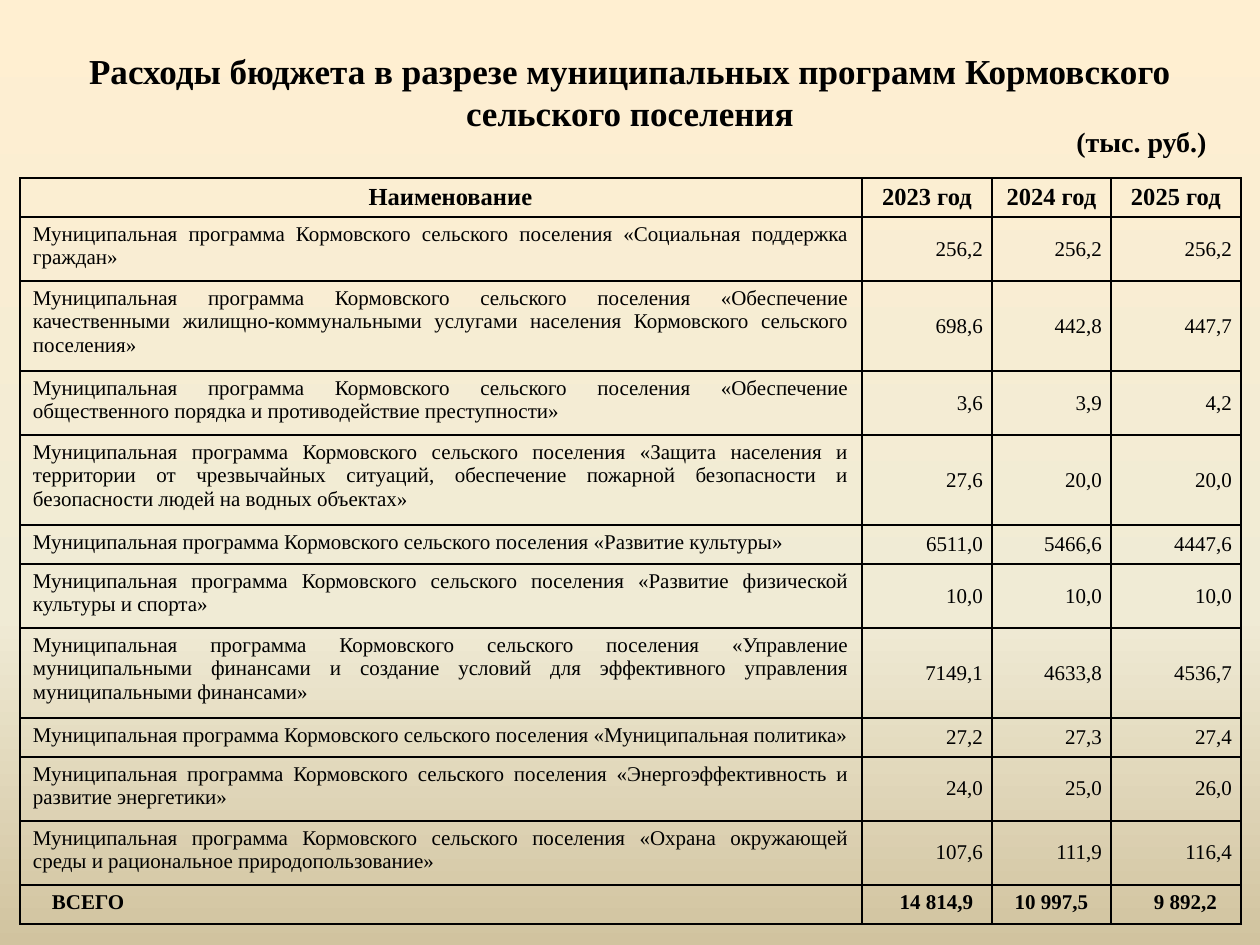
from copy import deepcopy

from lxml import etree
from pptx import Presentation
from pptx.dml.color import RGBColor
from pptx.enum.text import MSO_ANCHOR, MSO_AUTO_SIZE, PP_ALIGN
from pptx.oxml.ns import qn
from pptx.util import Emu, Pt

PX = 914400 // 126
FONT = "Times New Roman"
COLORS = {"ink": "000000", "top": "FFEFD1", "middle": "F0EBD5", "bottom": "D1C39F"}
LEFT, CENTER, RIGHT, JUSTIFY = PP_ALIGN.LEFT, PP_ALIGN.CENTER, PP_ALIGN.RIGHT, PP_ALIGN.JUSTIFY
TOP, MIDDLE = MSO_ANCHOR.TOP, MSO_ANCHOR.MIDDLE
NO_FIT = MSO_AUTO_SIZE.NONE
HANGING = (76, -57)

TITLE = "Расходы бюджета в разрезе муниципальных программ Кормовского сельского поселения"
UNITS = "(тыс. руб.)"
HEADER = ("Наименование", "2023 год", "2024 год", "2025 год")
PROGRAM = "Муниципальная программа Кормовского сельского поселения «{}»"
PROGRAMS = [
    ("Социальная поддержка граждан", "256,2", "256,2", "256,2"),
    ("Обеспечение качественными жилищно-коммунальными услугами населения "
     "Кормовского сельского поселения", "698,6", "442,8", "447,7"),
    ("Обеспечение общественного порядка и противодействие преступности", "3,6", "3,9", "4,2"),
    ("Защита населения и территории от чрезвычайных ситуаций, обеспечение пожарной "
     "безопасности и безопасности людей на водных объектах", "27,6", "20,0", "20,0"),
    ("Развитие культуры", "6511,0", "5466,6", "4447,6"),
    ("Развитие физической культуры и спорта", "10,0", "10,0", "10,0"),
    ("Управление муниципальными финансами и создание условий для эффективного "
     "управления муниципальными финансами", "7149,1", "4633,8", "4536,7"),
    ("Муниципальная политика", "27,2", "27,3", "27,4"),
    ("Энергоэффективность и развитие энергетики", "24,0", "25,0", "26,0"),
    ("Охрана окружающей среды и рациональное природопользование", "107,6", "111,9", "116,4"),
]
TOTAL = ("ВСЕГО", "14 814,9", "10 997,5", "9 892,2")
COLUMN_WIDTHS = (842, 130, 119, 130)
LINE_COUNTS = (1, 2, 3, 2, 3, 1, 2, 3, 1, 2, 2, 1)
ROW_HEIGHTS = {1: 39, 2: 64, 3: 90}


def px(length):
    return Emu(length * PX)


def set_attributes(target, values):
    for name, value in values.items():
        setattr(target, name, value)


def write_text(frame, text, size, bold, align, indent=None):
    para = frame.paragraphs[0]
    para.alignment = align
    if indent:
        properties = para._p.get_or_add_pPr()
        for name, length in zip(("marL", "indent"), indent):
            properties.set(name, str(px(length)))
    span = para.add_run()
    span.text = text
    set_attributes(span.font, {"name": FONT, "size": Pt(size), "bold": bold})
    span.font.color.rgb = RGBColor.from_string(COLORS["ink"])


def paint_background(page):
    fill = page.background.fill
    fill.gradient()
    fill.gradient_angle = 270
    stop_list = page.element.find(".//" + qn("a:gsLst"))
    stop_list.append(deepcopy(stop_list[-1]))
    stops = zip(fill.gradient_stops, (0, 0.65, 1), ("top", "middle", "bottom"))
    for stop, position, color in stops:
        stop.position = position
        stop.color.rgb = RGBColor.from_string(COLORS[color])


def add_title(page):
    title = page.shapes.title
    set_attributes(title, {"left": px(63), "top": px(38), "width": px(1134), "height": px(107)})
    set_attributes(title.text_frame, {
        "vertical_anchor": MIDDLE, "auto_size": NO_FIT, "word_wrap": True})
    write_text(title.text_frame, TITLE, 20, True, CENTER)


def add_units(page):
    box = page.shapes.add_textbox(px(1004), px(118), px(256), px(47))
    box.text_frame.word_wrap = True
    write_text(box.text_frame, UNITS, 16, True, CENTER, (19, 0))


def draw_borders(cell):
    properties = cell._tc.get_or_add_tcPr()
    for position, side in enumerate(("lnL", "lnR", "lnT", "lnB")):
        line = etree.Element(qn("a:" + side), w=str(Pt(1)))
        solid = etree.SubElement(line, qn("a:solidFill"))
        etree.SubElement(solid, qn("a:srgbClr"), val=COLORS["ink"])
        properties.insert(position, line)


def fill_cell(cell, text, size, bold, align, anchor, margins=(13, 6), indent=None):
    side, edge = map(px, margins)
    set_attributes(cell, {
        "vertical_anchor": anchor, "margin_left": side, "margin_right": side,
        "margin_top": edge, "margin_bottom": edge})
    cell.fill.background()
    draw_borders(cell)
    write_text(cell.text_frame, text, size, bold, align, indent)


def add_budget_table(page):
    heights = [ROW_HEIGHTS[count] for count in LINE_COUNTS]
    table = page.shapes.add_table(
        len(heights), len(COLUMN_WIDTHS), px(20), px(178),
        px(sum(COLUMN_WIDTHS)), px(sum(heights))).table
    set_attributes(table, {"first_row": False, "horz_banding": False})
    for column, width in zip(table.columns, COLUMN_WIDTHS):
        column.width = px(width)
    for row, height in zip(table.rows, heights):
        row.height = px(height)

    for index, text in enumerate(HEADER):
        indent = HANGING if index == 0 else None
        fill_cell(table.cell(0, index), text, 14, True, CENTER, MIDDLE, indent=indent)
    for number, (name, *amounts) in enumerate(PROGRAMS, 1):
        fill_cell(table.cell(number, 0), PROGRAM.format(name), 12, False, JUSTIFY, TOP)
        for index, amount in enumerate(amounts, 1):
            fill_cell(table.cell(number, index), amount, 12, False, RIGHT, MIDDLE, (9, 0))
    for index, text in enumerate(TOTAL):
        align = LEFT if index == 0 else CENTER
        indent = None if index == 2 else HANGING
        fill_cell(table.cell(len(heights) - 1, index), text, 12, True, align, TOP, indent=indent)


def main():
    deck = Presentation()
    set_attributes(deck, {"slide_width": px(1260), "slide_height": px(945)})
    page = deck.slides.add_slide(deck.slide_layouts[5])
    paint_background(page)
    add_title(page)
    add_budget_table(page)
    add_units(page)
    deck.save("out.pptx")


if __name__ == "__main__":
    main()
